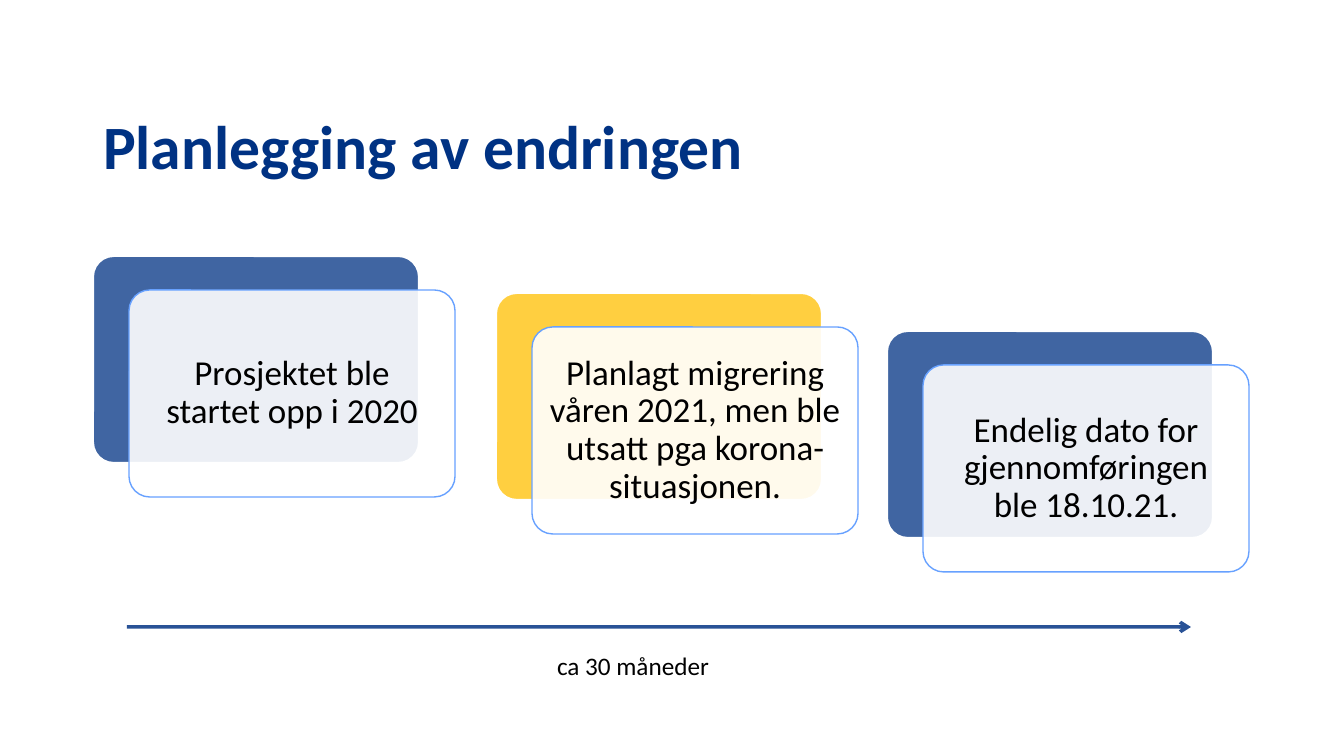
from lxml import etree
from pptx import Presentation
from pptx import util as u
from pptx.dml.color import RGBColor
from pptx.enum import shapes, text
from pptx.oxml.ns import qn

SCALE = 914400 / 100.8
NAVY, GOLD, SKY, WHITE, BLACK = "003283", "FFC000", "67A1FF", "FFFFFF", "000000"
CARD_WIDTH, CARD_HEIGHT = 326, 207
STAGES = [
    (93, 256, NAVY, "Prosjektet ble startet opp i 2020"),
    (496, 293, GOLD, "Planlagt migrering våren 2021, men ble utsatt pga korona-situasjonen."),
    (887, 331, NAVY, "Endelig dato for gjennomføringen ble 18.10.21."),
]


def px(*lengths):
    """Turn pixel lengths into EMU."""
    return [u.Emu(round(length * SCALE)) for length in lengths]


def paint(color_format, color):
    """Set a colour from a hex string."""
    color_format.rgb = RGBColor.from_string(color)


def set_alpha(fill, color, percent):
    """Give a solid fill a colour and an opacity."""
    fill.solid()
    paint(fill.fore_color, color)
    node = fill._xPr.find(qn("a:solidFill"))[0]
    etree.SubElement(node, qn("a:alpha")).set("val", str(percent * 1000))


def write(frame, words, size, color, bold=False, align=None, spacing=None):
    """Write one formatted run into a text frame."""
    para = frame.paragraphs[0]
    para.alignment = align
    para.line_spacing = spacing
    span = para.add_run()
    span.text = words
    span.font.name = "Calibri"
    span.font.size = u.Pt(size)
    span.font.bold = bold
    paint(span.font.color, color)


def add_title(page, box, words):
    """Place and format the title placeholder."""
    title = page.shapes.title
    title.left, title.top, title.width, title.height = px(*box)
    title.text_frame.vertical_anchor = text.MSO_ANCHOR.TOP
    write(title.text_frame, words, 44, NAVY, True, text.PP_ALIGN.LEFT, 0.9)


def add_panel(page, box, fill, opacity, edge, weight):
    """Add a translucent rounded rectangle."""
    panel = page.shapes.add_shape(shapes.MSO_SHAPE.ROUNDED_RECTANGLE, *px(*box))
    panel.adjustments[0] = 0.1
    panel.shadow.inherit = False
    set_alpha(panel.fill, fill, opacity)
    paint(panel.line.color, edge)
    panel.line.width = u.Pt(weight)
    return panel


def add_stage(page, box, color, words):
    """Add a coloured panel with an offset text card over it."""
    left, top, width, height = box
    add_panel(page, box, color, 75, WHITE, 1.5)
    card = add_panel(page, (left + 36, top + 34, width, height), WHITE, 90, SKY, 1)
    frame = card.text_frame
    frame.word_wrap = True
    frame.vertical_anchor = text.MSO_ANCHOR.MIDDLE
    frame.margin_left, frame.margin_top, frame.margin_right, frame.margin_bottom = px(10, 10, 10, 10)
    write(frame, words, 25, BLACK, align=text.PP_ALIGN.CENTER, spacing=0.9)


def add_timeline(page, box, words):
    """Add the duration arrow along the top of the box and its caption below."""
    left, top, width, height = box
    arrow = page.shapes.add_connector(
        shapes.MSO_CONNECTOR.STRAIGHT, *px(left, top, left + width, top))
    arrow.line.width = u.Pt(2.5)
    set_alpha(arrow.line.fill, NAVY, 83)
    etree.SubElement(arrow.line._ln, qn("a:tailEnd")).set("type", "arrow")
    etree.SubElement(arrow._element.spPr, qn("a:effectLst"))
    caption = page.shapes.add_textbox(*px(left + 415, top + 18, 216, height - 18))
    frame = caption.text_frame
    frame.word_wrap = True
    frame.margin_left = px(15)[0]
    write(frame, words, 18, BLACK)


def main():
    """Build the slide and save it."""
    deck = Presentation()
    deck.slide_width, deck.slide_height = px(1344, 756)
    page = deck.slides.add_slide(deck.slide_layouts[5])
    add_title(page, (93, 111, 1159, 131), "Planlegging av endringen")
    for left, top, color, words in STAGES:
        add_stage(page, (left, top, CARD_WIDTH, CARD_HEIGHT), color, words)
    add_timeline(page, (127, 627, 1064, 58), "ca 30 måneder")
    deck.save("out.pptx")


if __name__ == "__main__":
    main()
